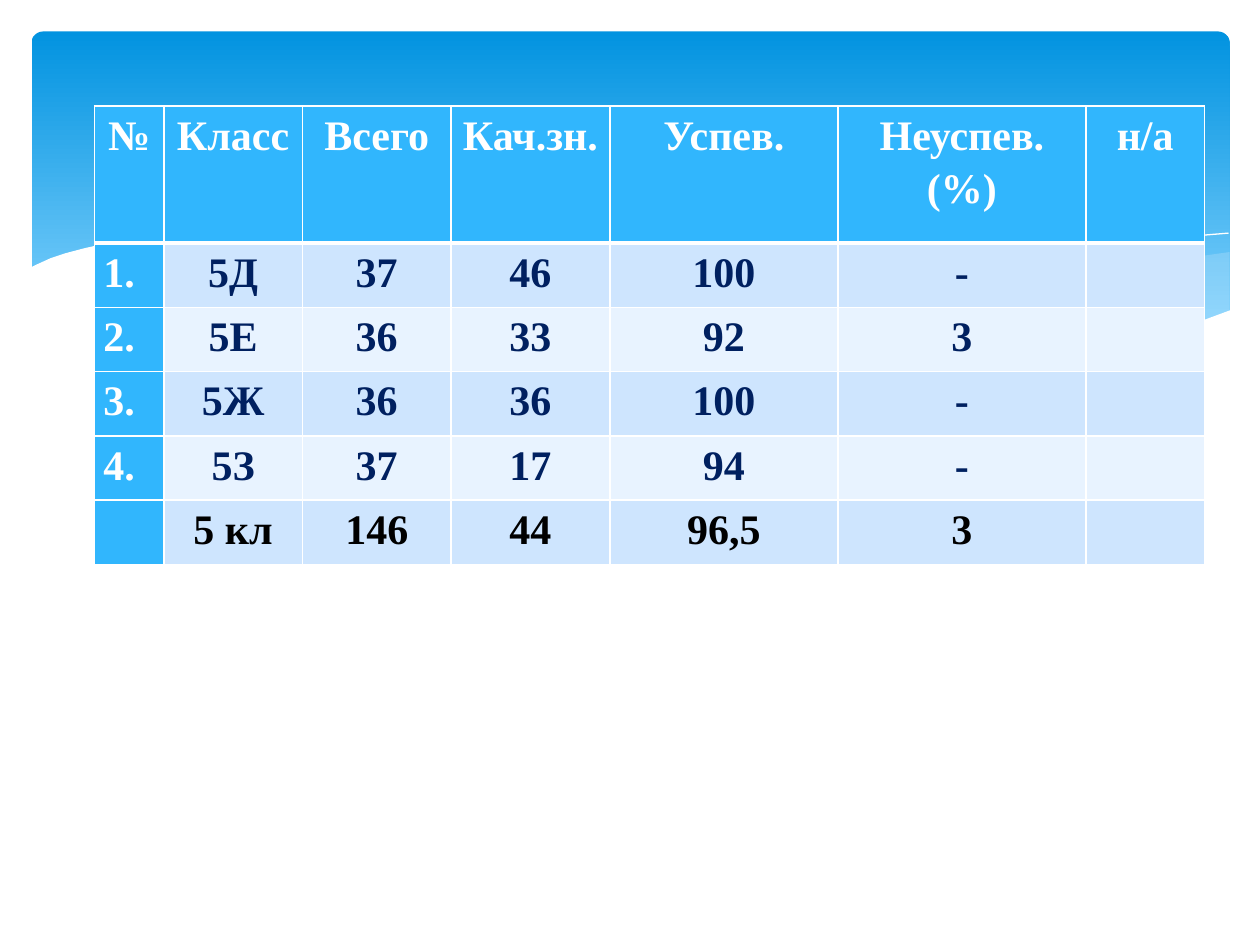
from pptx import Presentation
from pptx.dml.color import RGBColor
from pptx.enum.shapes import MSO_SHAPE
from pptx.enum.text import PP_ALIGN
from pptx.oxml import parse_xml
from pptx.oxml.ns import nsdecls, qn
from pptx.util import Inches, Pt
from lxml import etree

ROUND = MSO_SHAPE.ROUNDED_RECTANGLE
LEFT, CENTER = PP_ALIGN.LEFT, PP_ALIGN.CENTER
COLS, ROWS = 10, 7.5  # slide grid

HEAD = ["№", "Класс", "Всего", "Кач.зн.", "Успев.", "Неуспев.\n(%)", "н/а"]
BODY = [
    ["1.", "5Д", "37", "46", "100", "-", ""],
    ["2.", "5Е", "36", "33", "92", "3", ""],
    ["3.", "5Ж", "36", "36", "100", "-", ""],
    ["4.", "5З", "37", "17", "94", "-", ""],
    ["", "5 кл", "146", "44", "96,5", "3", ""],
]
WIDTHS = [0.55, 1.1, 1.18, 1.26, 1.81, 1.97, 0.94]
HEIGHTS = [1.09] + [0.51] * len(BODY)

RIGHT_WAVE = [
    (9.76, 2), (9.48, 2.04), (9.21, 2.1), (8.91, 2.16), (8.61, 2.23), (8.05, 2.37),
    (7.53, 2.48), (7.06, 2.57), (6.61, 2.65), (6.91, 2.69), (7.32, 2.74),
    (7.69, 2.77), (8.14, 2.78), (8.54, 2.76), (8.89, 2.72), (9.21, 2.65),
    (9.49, 2.57), (9.76, 2.47)]
MID_WAVE = [
    (8.93, 2.73), (8.37, 2.65), (7.75, 2.54), (7.06, 2.4), (6.29, 2.22),
    (5.84, 2.11), (5.41, 2.03), (5.02, 1.96), (4.65, 1.91), (4.2, 1.87),
    (3.8, 1.85), (3.44, 1.86), (3.13, 1.88), (2.86, 1.91), (3.42, 1.99),
    (4.04, 2.11), (4.49, 2.22), (5.3, 2.4), (6.01, 2.55), (6.65, 2.66),
    (7.22, 2.74), (7.73, 2.77), (8.18, 2.78), (8.57, 2.77)]
LONG_LINE = [
    (3.09, 1.95), (3.28, 1.92), (3.63, 1.89), (4.01, 1.87), (4.5, 1.88),
    (5.1, 1.92), (5.82, 2), (6.65, 2.13), (7.27, 2.26), (7.95, 2.41),
    (8.69, 2.61), (9.07, 2.72)]
SHORT_LINE = [
    (6.13, 2.57), (6.53, 2.46), (6.95, 2.35), (7.48, 2.23), (8.06, 2.1),
    (8.66, 1.99), (9.1, 1.92), (9.51, 1.87), (9.75, 1.85)]
WHITE_WAVE = [
    (9.77, 2.46), (9.5, 2.56), (9.2, 2.65), (8.87, 2.71), (8.5, 2.75),
    (8.09, 2.77), (7.61, 2.75), (7.08, 2.7), (6.48, 2.62), (5.79, 2.5),
    (5.03, 2.33), (4.47, 2.2), (3.91, 2.07), (3.4, 1.97), (2.92, 1.9),
    (2.5, 1.86), (2.11, 1.84), (1.61, 1.84), (1.32, 1.86), (1.06, 1.89),
    (0.85, 1.93), (0.67, 1.97), (0.52, 2.01), (0.4, 2.05), (0.29, 2.1),
    (0.23, 2.13), (0.23, 3.29), (9.77, 3.29)]


def color(code):
    return RGBColor.from_string(code)


class Board:
    font, size, leading, inset = "Times New Roman", 24, 1.15, 0.07
    white, blue, navy, black = "FFFFFF", "31B6FD", "002060", "000000"
    bands = ["CEE5FE", "E8F3FF"]

    def __init__(self, deck):
        self.unit = deck.slide_width / COLS
        self.slide = deck.slides.add_slide(deck.slide_layouts[6])

    def span(self, *cells):
        return [round(n * self.unit) for n in cells]

    def banner(self, box, top, end):
        shape = self.slide.shapes.add_shape(ROUND, *self.span(*box))
        shape.shadow.inherit = False
        shape.adjustments[0] = 0.034
        shape.line.fill.background()
        shape.fill.gradient()
        shape.fill.gradient_angle = 270
        for stop, code, place in zip(shape.fill.gradient_stops, (top, end), (0, 0.9)):
            stop.color.rgb = color(code)
            stop.position = place

    def outline(self, points, closed):
        dots = [self.span(*dot) for dot in points]
        pen = self.slide.shapes.build_freeform(*dots[0])
        pen.add_line_segments(dots[1:], close=closed)
        shape = pen.convert_to_shape()
        shape.shadow.inherit = False
        return shape

    def wave(self, points, code, alpha=100):
        shape = self.outline(points, True)
        shape.line.fill.background()
        shape.fill.solid()
        shape.fill.fore_color.rgb = color(code)
        tint = shape.fill._xPr.find(".//" + qn("a:srgbClr"))
        etree.SubElement(tint, qn("a:alpha")).set("val", str(alpha * 1000))

    def curve(self, points):
        shape = self.outline(points, False)
        shape.fill.background()
        shape.line.color.rgb = color(self.white)
        shape.line.width = Pt(0)

    def border(self, cell, base):
        """Draw white edges, the bottom one base points wide."""
        props = cell._tc.get_or_add_tcPr()
        for spot, (side, width) in enumerate(zip("LRTB", (1, 1, 1, base))):
            props.insert(spot, parse_xml(
                f'<a:ln{side} {nsdecls("a")} w="{Pt(width)}"><a:solidFill>'
                f'<a:srgbClr val="{self.white}"/></a:solidFill></a:ln{side}>'))

    def cell(self, cell, text, fill, ink, align, base):
        cell.fill.solid()
        cell.fill.fore_color.rgb = color(fill)
        cell.margin_left = cell.margin_right = Inches(self.inset)
        cell.margin_top = cell.margin_bottom = 0
        self.border(cell, base)
        cell.text_frame.text = text
        for para in cell.text_frame.paragraphs:
            para.alignment = align
            para.line_spacing = self.leading
            for run in para.runs:
                run.font.name = self.font
                run.font.size = Pt(self.size)
                run.font.bold = True
                run.font.color.rgb = color(ink)

    def table(self, left, top, rows):
        box = self.span(left, top, sum(WIDTHS), sum(HEIGHTS))
        grid = self.slide.shapes.add_table(len(rows), len(WIDTHS), *box).table
        grid.horz_banding = False
        for col, width in zip(grid.columns, self.span(*WIDTHS)):
            col.width = width
        for row, height in zip(grid.rows, self.span(*HEIGHTS)):
            row.height = height
        last = len(rows) - 1
        for r, row in enumerate(rows):
            for c, text in enumerate(row):
                lead = r == 0 or c == 0
                fill = self.blue if lead else self.bands[(r - 1) % 2]
                ink = self.white if lead else self.black if r == last else self.navy
                align = LEFT if c == 0 and r else CENTER
                self.cell(grid.cell(r, c), text, fill, ink, align, 1 if r else 3)


def main():
    deck = Presentation()
    deck.slide_width, deck.slide_height = Inches(COLS), Inches(ROWS)
    board = Board(deck)
    board.banner((0.25, 0.25, 9.51, 2.7), "0293E0", "83D3FE")
    board.wave(RIGHT_WAVE, "C6E7FC", 29)
    board.wave(MID_WAVE, "C6E7FC", 40)
    board.curve(LONG_LINE)
    board.curve(SHORT_LINE)
    board.wave(WHITE_WAVE, board.white)
    board.table(0.75, 0.84, [HEAD] + BODY)
    deck.save("out.pptx")


if __name__ == "__main__":
    main()
